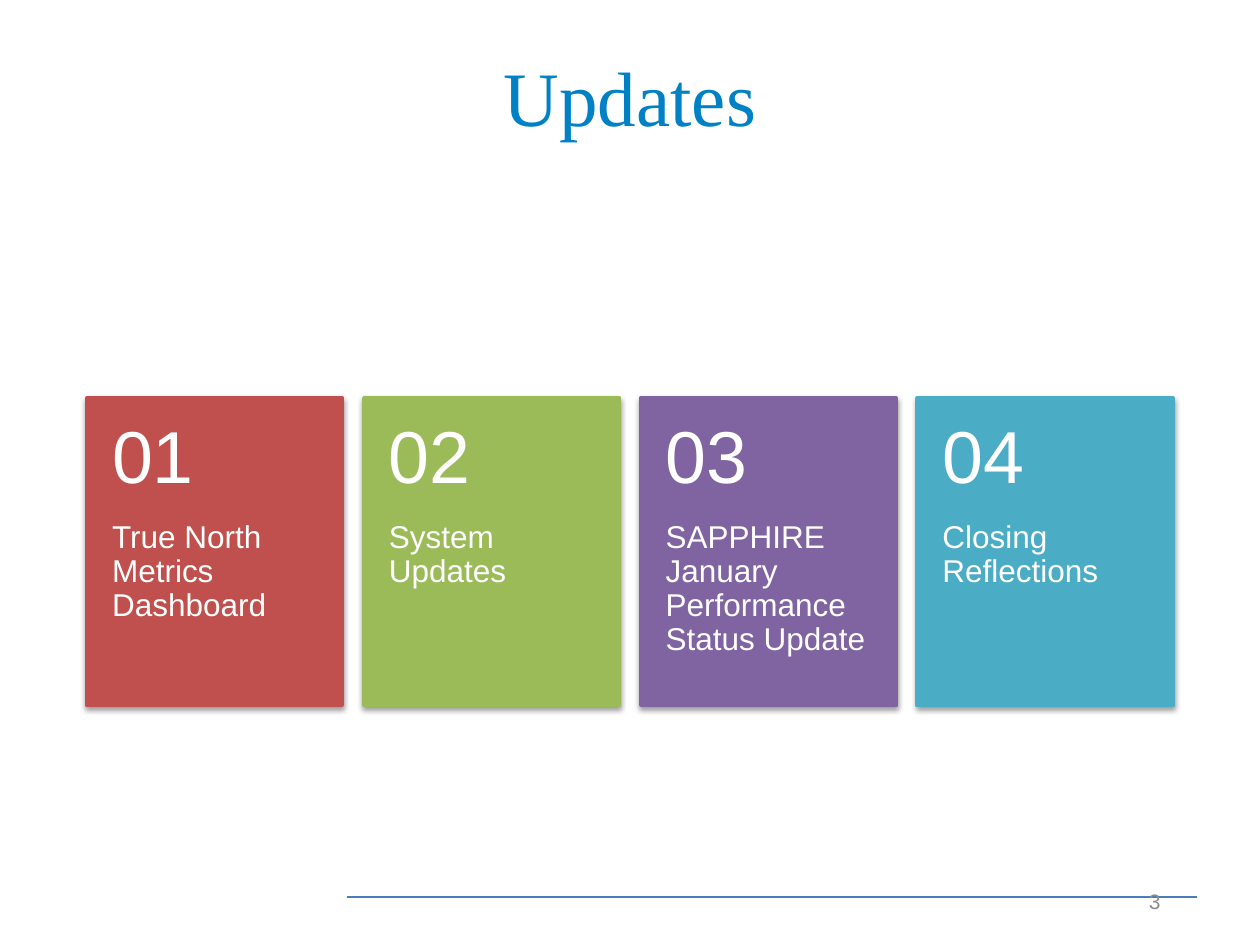
from dataclasses import dataclass

from lxml import etree
from pptx import Presentation
from pptx.dml.color import RGBColor
from pptx.enum.shapes import MSO_CONNECTOR, MSO_SHAPE
from pptx.enum.text import MSO_ANCHOR, MSO_AUTO_SIZE, PP_ALIGN
from pptx.oxml.ns import qn
from pptx.util import Inches, Pt

STRAIGHT, RECTANGLE = MSO_CONNECTOR.STRAIGHT, MSO_SHAPE.RECTANGLE
TOP, MIDDLE = MSO_ANCHOR.TOP, MSO_ANCHOR.MIDDLE
LEFT, CENTER, RIGHT = PP_ALIGN.LEFT, PP_ALIGN.CENTER, PP_ALIGN.RIGHT
FIXED_SIZE = MSO_AUTO_SIZE.NONE
TITLE_ONLY = 5


@dataclass(frozen=True)
class Theme:
    title_font: str = "Times New Roman"
    body_font: str = "Arial"
    title_color: str = "0081C6"
    text_color: str = "FFFFFF"
    muted: str = "8C8C8C"
    rule: str = "4B7EBC"
    shadow: str = "000000"
    cards: tuple = ("C0504D", "9BBB59", "8064A2", "4BACC6")
    title_size: int = 44
    number_size: int = 42
    label_size: int = 18
    page_size: int = 12


class SlideBuilder:
    width, height = 10, 7.5
    margin = 0.69
    content_width = width - 2 * margin
    card_width, card_height = 2.03, 2.44
    card_top = 3.16
    number_share = 0.4  # part of a card's height taken by its number

    def __init__(self, theme):
        self.theme = theme
        self.deck = Presentation()
        self.deck.slide_width = Inches(self.width)
        self.deck.slide_height = Inches(self.height)
        self.slide = self.deck.slides.add_slide(self.deck.slide_layouts[TITLE_ONLY])

    def column_left(self, column):
        pitch = (self.content_width - self.card_width) / (len(self.theme.cards) - 1)
        return self.margin + column * pitch

    def fill_text(self, box, text, size, color, font=None, align=LEFT, anchor=TOP,
                  insets=(0.1, 0.05, 0.1, 0.05), spacing=0.9):
        frame = box.text_frame
        sides = ("margin_left", "margin_top", "margin_right", "margin_bottom")
        formats = dict(zip(sides, map(Inches, insets)))
        formats.update(word_wrap=True, auto_size=FIXED_SIZE, vertical_anchor=anchor)
        for name, value in formats.items():
            setattr(frame, name, value)
        para = frame.paragraphs[0]
        para.alignment = align
        para.line_spacing = spacing
        span = para.add_run()
        span.text = text
        span.font.name = font or self.theme.body_font
        span.font.size = Pt(size)
        span.font.color.rgb = RGBColor.from_string(color)

    def title(self, text):
        box = self.slide.shapes.title
        place = dict(left=self.margin, top=0.4, width=self.content_width, height=1.45)
        for name, value in place.items():
            setattr(box, name, Inches(value))
        # The deep lower inset lifts the line above the middle of its box
        self.fill_text(box, text, self.theme.title_size, self.theme.title_color,
                       self.theme.title_font, CENTER, MIDDLE, (0.1, 0.05, 0.1, 0.68))

    def text(self, shapes, place, text, size, color, **style):
        box = shapes.add_textbox(*map(Inches, place))
        self.fill_text(box, text, size, color, **style)

    def rule(self, start, end, level):
        line = self.slide.shapes.add_connector(
            STRAIGHT, Inches(start), Inches(level), Inches(end), Inches(level))
        line.line.color.rgb = RGBColor.from_string(self.theme.rule)
        line.line.width = Pt(0.75)
        etree.SubElement(line._element.spPr, qn("a:effectLst"))

    def drop_shadow(self, shape):
        shape.shadow.inherit = False
        effects = shape._element.spPr.find(qn("a:effectLst"))
        shadow = etree.SubElement(
            effects, qn("a:outerShdw"), blurRad=str(Pt(3.1)), dist=str(Pt(1.6)),
            dir=str(90 * 60000), rotWithShape="0")
        color = etree.SubElement(shadow, qn("a:srgbClr"), val=self.theme.shadow)
        etree.SubElement(color, qn("a:alpha"), val="38000")

    def card(self, shapes, column, label):
        theme = self.theme
        left, top = self.column_left(column), self.card_top
        width, height = self.card_width, self.card_height
        split = height * self.number_share

        # Coloured panel
        panel = shapes.add_shape(RECTANGLE, *map(Inches, (left, top, width, height)))
        color = RGBColor.from_string(theme.cards[column])
        panel.fill.solid()
        panel.fill.fore_color.rgb = color
        panel.line.color.rgb = color
        panel.line.width = Pt(2)
        self.drop_shadow(panel)

        # Label below, number above
        self.text(shapes, (left, top + split, width, height - split), label,
                  theme.label_size, theme.text_color, insets=(0.2, 0, 0.2, 0.36))
        self.text(shapes, (left, top, width, split), f"{column + 1:02d}",
                  theme.number_size, theme.text_color, anchor=MIDDLE,
                  insets=(0.2, 0.18, 0.2, 0.18))


def main():
    theme = Theme()
    builder = SlideBuilder(theme)

    # Title and footer
    builder.rule(2.75, 9.5, 7.12)
    builder.title("Updates")
    builder.text(builder.slide.shapes, (7.06, 6.95, 2.25, 0.4), "3", theme.page_size,
                 theme.muted, align=RIGHT, anchor=MIDDLE, spacing=1.0)

    # Row of numbered cards
    labels = (
        "True North Metrics Dashboard",
        "System Updates",
        "SAPPHIRE January Performance Status Update",
        "Closing Reflections",
    )
    group = builder.slide.shapes.add_group_shape()
    for column, label in enumerate(labels):
        builder.card(group.shapes, column, label)

    builder.deck.save("out.pptx")


if __name__ == "__main__":
    main()
